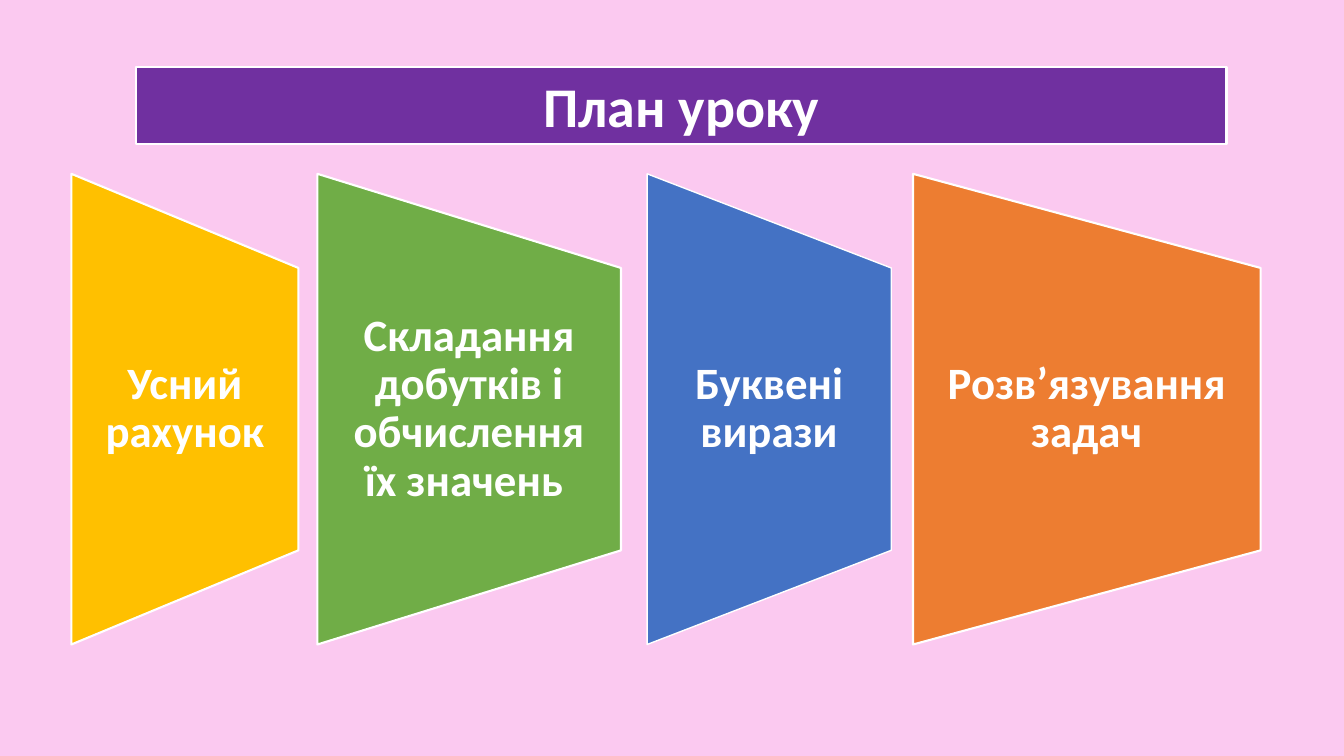
from pptx import Presentation
from pptx.dml.color import RGBColor
from pptx.enum import shapes, text
from pptx.util import Cm, Pt

PINK = RGBColor(0xFB, 0xC9, 0xF0)
PURPLE = RGBColor(0x70, 0x30, 0xA0)
YELLOW = RGBColor(0xFF, 0xC0, 0x00)
GREEN = RGBColor(0x70, 0xAD, 0x47)
BLUE = RGBColor(0x44, 0x72, 0xC4)
ORANGE = RGBColor(0xED, 0x7D, 0x31)
WHITE = RGBColor(0xFF, 0xFF, 0xFF)

STEPS = [
    ("Усний рахунок", YELLOW, 1.8, 5.72, 1.5),
    ("Складання добутків і обчислення їх значень ", GREEN, 8, 7.65, 1.5),
    ("Буквені вирази", BLUE, 16.31, 6.15, 1),
    ("Розв’язування задач", ORANGE, 23.01, 8.76, 1.5),
]


def paint(shape, color, line_width):
    """Give a shape a solid fill and a white outline."""
    shape.fill.solid()
    shape.fill.fore_color.rgb = color
    shape.line.color.rgb = WHITE
    shape.line.width = Pt(line_width)


def write(shape, words, size):
    """Set bold white centred text in a shape."""
    frame = shape.text_frame
    frame.text = words
    frame.word_wrap = True
    frame.vertical_anchor = text.MSO_ANCHOR.MIDDLE
    paragraph = frame.paragraphs[0]
    paragraph.alignment = text.PP_ALIGN.CENTER
    font = paragraph.runs[0].font
    font.name = "Calibri"
    font.size = Pt(size)
    font.bold = True
    font.color.rgb = WHITE


def add_heading(slide, left, top, width, height):
    """Turn the title placeholder into a purple banner."""
    title = slide.shapes.title
    title.left, title.top, title.width, title.height = left, top, width, height
    paint(title, PURPLE, 1.5)
    write(title, "План уроку", 40)
    title.text_frame.auto_size = text.MSO_AUTO_SIZE.NONE


def add_step(slide, words, color, line_width, left, top, width, height):
    """Place a trapezoid narrowing to the right, with upright text over it."""
    shift = (width - height) // 2
    panel = slide.shapes.add_shape(
        shapes.MSO_SHAPE.FLOWCHART_MANUAL_OPERATION,
        left + shift, top - shift, height, width)
    panel.rotation = 270
    panel.shadow.inherit = False
    paint(panel, color, line_width)

    label = slide.shapes.add_textbox(
        left, top + height // 5, width, height * 3 // 5)
    write(label, words, 32)
    frame = label.text_frame
    frame.margin_left = frame.margin_right = Cm(0.56)
    frame.margin_top = frame.margin_bottom = 0
    frame.paragraphs[0].line_spacing = 0.9


def build_plan(slide):
    """Lay out the heading and the four lesson steps."""
    slide.background.fill.solid()
    slide.background.fill.fore_color.rgb = PINK
    add_heading(slide, Cm(3.43), Cm(1.68), Cm(27.48), Cm(1.96))
    for words, color, left, width, line_width in STEPS:
        add_step(slide, words, color, line_width,
                 Cm(left), Cm(4.38), Cm(width), Cm(11.86))


def main():
    """Create the presentation and save it."""
    presentation = Presentation()
    presentation.slide_width = Cm(33.87)
    presentation.slide_height = Cm(19.05)
    build_plan(presentation.slides.add_slide(presentation.slide_layouts[5]))
    presentation.save("out.pptx")


if __name__ == "__main__":
    main()
